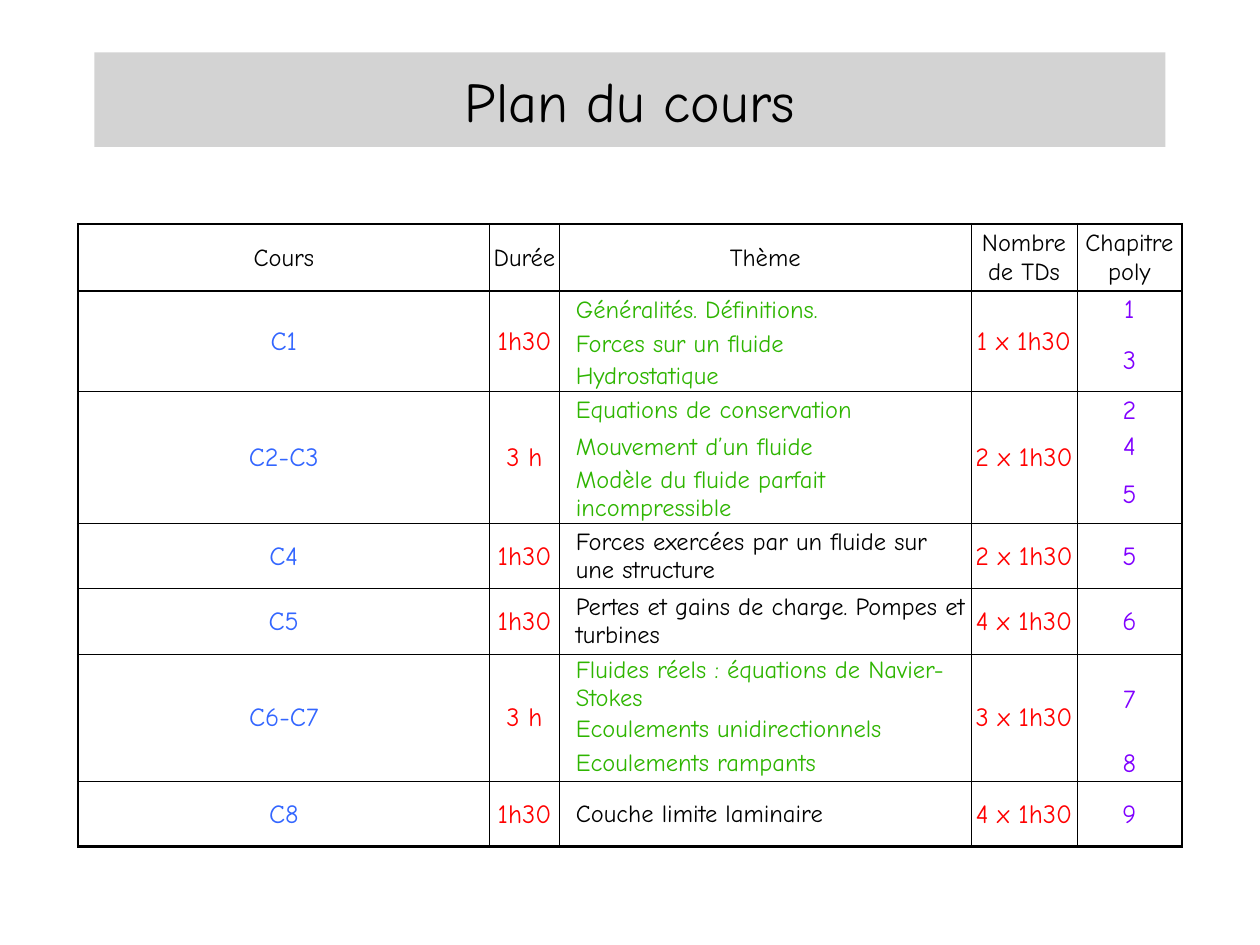
from lxml import etree
from pptx import Presentation
from pptx.dml.color import RGBColor
from pptx.enum import shapes, text
from pptx.oxml.ns import qn
from pptx.util import Pt

FONT = "Comic Neue"
BLACK = RGBColor(0, 0, 0)
GREY = RGBColor(0xD3, 0xD3, 0xD3)
BLUE = RGBColor(0x33, 0x66, 0xFF)
RED = RGBColor(0xFF, 0, 0)
GREEN = RGBColor(0x2E, 0xB5, 0)
PURPLE = RGBColor(0x80, 0, 0xFF)

THICK, THIN = 1.5, 0.5
HEAD = ["Cours", "Durée", "Thème", "Nombre de TDs", "Chapitre poly"]
COLS = [235.2, 39.9, 235.2, 60.6, 59.9]
ROWS = [38.2, 21.6, 18, 18, 20.9, 20.9, 33.5, 37.3, 37.4, 33.8, 18, 20.9, 37.4]

# Course, length, themes, theme colour, classes, chapters as (number, rows)
PLAN = [
    ("C1", "1h30",
     ["Généralités. Définitions.", "Forces sur un fluide", "Hydrostatique"],
     GREEN, "1 x 1h30", [("1", 1), ("3", 2)]),
    ("C2-C3", "3 h",
     ["Equations de conservation", "Mouvement d’un fluide",
      "Modèle du fluide parfait incompressible"],
     GREEN, "2 x 1h30", [("2", 1), ("4", 1), ("5", 1)]),
    ("C4", "1h30", ["Forces exercées par un fluide sur une structure"],
     BLACK, "2 x 1h30", [("5", 1)]),
    ("C5", "1h30", ["Pertes et gains de charge. Pompes et turbines"],
     BLACK, "4 x 1h30", [("6", 1)]),
    ("C6-C7", "3 h",
     ["Fluides réels : équations de Navier-Stokes",
      "Ecoulements unidirectionnels", "Ecoulements rampants"],
     GREEN, "3 x 1h30", [("7", 2), ("8", 1)]),
    ("C8", "1h30", ["Couche limite laminaire"],
     BLACK, "4 x 1h30", [("9", 1)]),
]


def style(para, size, color, align):
    para.alignment = align
    for run in para.runs:
        run.font.name = FONT
        run.font.size = Pt(size)
        run.font.color.rgb = color


def write(grid, row, col, words, size, color, span=1):
    cell = grid.cell(row, col)
    if span > 1:
        cell.merge(grid.cell(row + span - 1, col))
    cell.text_frame.text = words
    left = col == 2 and row > 0
    style(cell.text_frame.paragraphs[0], size, color,
          text.PP_ALIGN.LEFT if left else text.PP_ALIGN.CENTER)
    cell.margin_left = Pt(9.4 if left else 0.7)


def edge(cell, tag, width):
    props = cell._tc.get_or_add_tcPr()
    line = etree.SubElement(props, qn("a:" + tag), w=str(Pt(width)))
    if width:
        fill = etree.SubElement(line, qn("a:solidFill"))
        etree.SubElement(fill, qn("a:srgbClr"), val=str(BLACK))
    else:
        etree.SubElement(line, qn("a:noFill"))


def finish(grid, rules):
    # Rules run around each course, heavier at the frame and the header
    for row in range(len(ROWS)):
        for col in range(len(COLS)):
            cell = grid.cell(row, col)
            end = row + (cell.span_height if cell.is_merge_origin else 1)
            edge(cell, "lnL", THIN if col else THICK)
            edge(cell, "lnR", THIN if col < len(COLS) - 1 else THICK)
            edge(cell, "lnT", rules.get(row, 0))
            edge(cell, "lnB", rules.get(end, 0))
            cell.fill.background()
            cell.vertical_anchor = text.MSO_ANCHOR.MIDDLE
            cell.margin_right = cell.margin_top = Pt(0.7)
            cell.margin_bottom = 0


def title(slide, x, y, w, h):
    bar = slide.shapes.add_shape(shapes.MSO_SHAPE.RECTANGLE,
                                 Pt(x), Pt(y), Pt(w), Pt(h))
    bar.shadow.inherit = False
    bar.fill.solid()
    bar.fill.fore_color.rgb = GREY
    bar.line.fill.background()
    frame = bar.text_frame
    frame.word_wrap = True
    frame.margin_left = frame.margin_right = 0
    frame.vertical_anchor = text.MSO_ANCHOR.MIDDLE
    frame.text = "Plan du cours"
    style(frame.paragraphs[0], 32, BLACK, text.PP_ALIGN.CENTER)


def plan(slide, x, y):
    grid = slide.shapes.add_table(len(ROWS), len(COLS), Pt(x), Pt(y),
                                  Pt(sum(COLS)), Pt(sum(ROWS))).table
    grid.first_row = grid.horz_banding = False
    for col, width in zip(grid.columns, COLS):
        col.width = Pt(width)
    for row, height in zip(grid.rows, ROWS):
        row.height = Pt(height)

    # Header
    for col, words in enumerate(HEAD):
        write(grid, 0, col, words, 14, BLACK)

    # Courses
    row = 1
    rules = {0: THICK}
    for course, hours, themes, color, classes, parts in PLAN:
        rules[row] = THIN
        span = len(themes)
        write(grid, row, 0, course, 15, BLUE, span)
        write(grid, row, 1, hours, 15, RED, span)
        write(grid, row, 3, classes, 15, RED, span)
        for step, theme in enumerate(themes):
            write(grid, row + step, 2, theme, 14, color)
        top = row
        for part, size in parts:
            write(grid, top, 4, part, 15, PURPLE, size)
            top += size
        row += span
    rules[1] = rules[row] = THICK
    finish(grid, rules)


def main():
    deck = Presentation()
    deck.slide_width, deck.slide_height = Pt(720), Pt(540)
    slide = deck.slides.add_slide(deck.slide_layouts[6])
    title(slide, 54, 30, 612, 54)
    plan(slide, 44.6, 128)
    deck.save("out.pptx")


if __name__ == "__main__":
    main()
